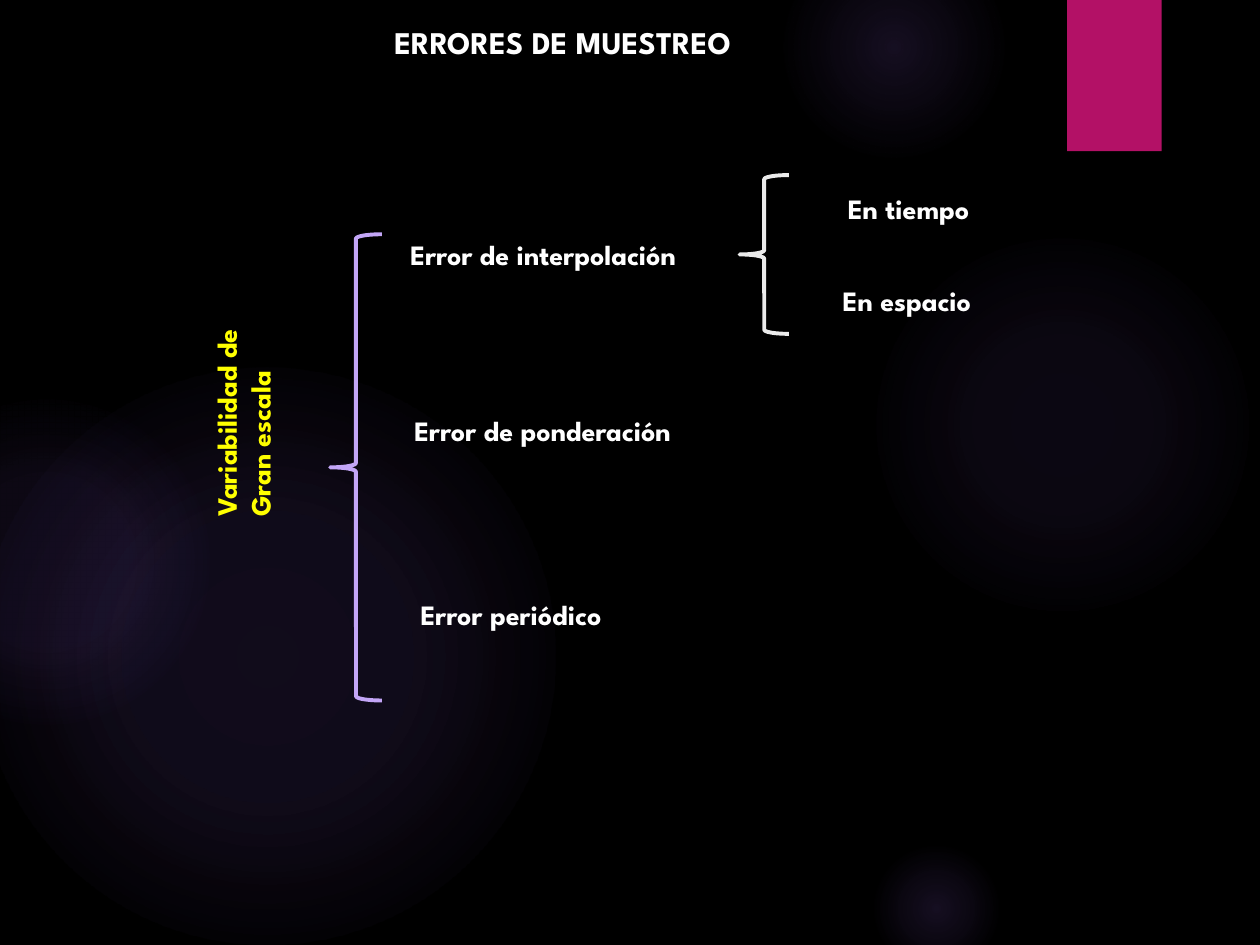
from lxml import etree
from pptx import Presentation
from pptx.dml.color import RGBColor as RGB
from pptx.enum.shapes import MSO_SHAPE as SHAPE
from pptx.enum.text import MSO_ANCHOR as ANCHOR, MSO_AUTO_SIZE as FIT, PP_ALIGN as ALIGN
from pptx.oxml.ns import nsdecls
from pptx.util import Inches, Pt

COLORS = {
    "background": "000000",
    "glow": "9B6BF2",
    "accent": "B31166",
    "text": "FFFFFF",
    "highlight": "FFFF00",
    "main_brace": "C3A6F7",
    "sub_brace": "EBEBEB",
}


def rgb(name):
    return RGB.from_string(COLORS[name])


def write_text(tf, text, font="League Spartan", size=16, color="text", bold=True):
    tf.word_wrap = False
    tf.auto_size = FIT.SHAPE_TO_FIT_TEXT
    tf.vertical_anchor = ANCHOR.TOP
    tf.text = text
    for p in tf.paragraphs:
        p.alignment = ALIGN.LEFT
        for r in p.runs:
            r.font.name = font
            r.font.size = Pt(size)
            r.font.bold = bold
            r.font.color.rgb = rgb(color)


class SlideBuilder:
    def __init__(self, prs):
        self.s = prs.slides.add_slide(prs.slide_layouts[5])
        fill = self.s.background.fill
        fill.solid()
        fill.fore_color.rgb = rgb("background")

    def shape(self, kind, x, y, w, h):
        sp = self.s.shapes.add_shape(kind, Inches(x), Inches(y), Inches(w), Inches(h))
        sp.shadow.inherit = False
        return sp

    def glow(self, x, y, size, stops):
        sp = self.shape(SHAPE.OVAL, x, y, size, size)
        sp.line.fill.background()
        gs = "".join(
            f'<a:gs pos="{pos * 1000}"><a:srgbClr val="{COLORS["glow"]}">'
            f'<a:alpha val="{alpha * 1000}"/></a:srgbClr></a:gs>'
            for pos, alpha in stops
        )
        grad = etree.fromstring(
            f'<a:gradFill {nsdecls("a")}><a:gsLst>{gs}</a:gsLst><a:path path="circle">'
            '<a:fillToRect l="50000" t="50000" r="50000" b="50000"/></a:path></a:gradFill>'
        )
        sp.line._get_or_add_ln().addprevious(grad)

    def block(self, x, y, w, h, color):
        sp = self.shape(SHAPE.RECTANGLE, x, y, w, h)
        sp.fill.solid()
        sp.fill.fore_color.rgb = rgb(color)
        sp.line.fill.background()

    def brace(self, x, y, w, h, color):
        sp = self.shape(SHAPE.LEFT_BRACE, x, y, w, h)
        sp.fill.background()
        sp.line.color.rgb = rgb(color)
        sp.line.width = Pt(2.25)

    def title(self, text, x, y, w, h):
        sp = self.s.shapes.title
        sp.left, sp.top, sp.width, sp.height = map(Inches, (x, y, w, h))
        write_text(sp.text_frame, text, size=18)

    def label(self, text, x, y, w, h=0.37, rotation=0, **style):
        sp = self.s.shapes.add_textbox(Inches(x), Inches(y), Inches(w), Inches(h))
        sp.rotation = rotation
        write_text(sp.text_frame, text, **style)


def main():
    prs = Presentation()
    prs.slide_width, prs.slide_height = Inches(10), Inches(7.5)
    slide = SlideBuilder(prs)

    for x, y, size, stops in (
        (6.89, 1.83, 3.08, ((0, 7), (36, 6), (69, 0))),
        (6.22, -0.5, 1.75, ((0, 14), (36, 7), (73, 0))),
        (6.89, 6.67, 1.08, ((0, 14), (36, 7), (66, 0))),
        (-0.17, 2.92, 4.58, ((0, 11), (36, 10), (75, 0))),
        (-0.92, 3.17, 2.58, ((0, 8), (36, 8), (72, 0))),
    ):
        slide.glow(x, y, size, stops)
    slide.block(8.47, 0, 0.75, 1.2, "accent")

    slide.title("ERRORES DE MUESTREO", 3.03, 0.13, 3.01, 0.4)
    slide.label("Variabilidad de\nGran escala", 0.95, 2.9, 1.96, 0.64,
                rotation=270, color="highlight")
    slide.brace(2.62, 1.86, 0.41, 3.7, "main_brace")
    slide.brace(5.87, 1.39, 0.39, 1.26, "sub_brace")
    for text, x, y, w in (
        ("Error de interpolación", 3.16, 1.84, 2.54),
        ("Error de ponderación", 3.19, 3.23, 2.52),
        ("Error periódico", 3.24, 4.69, 1.8),
        ("En tiempo", 6.63, 1.47, 1.29),
        ("En espacio", 6.59, 2.2, 1.4),
    ):
        slide.label(text, x, y, w)

    prs.save("out.pptx")


if __name__ == "__main__":
    main()
